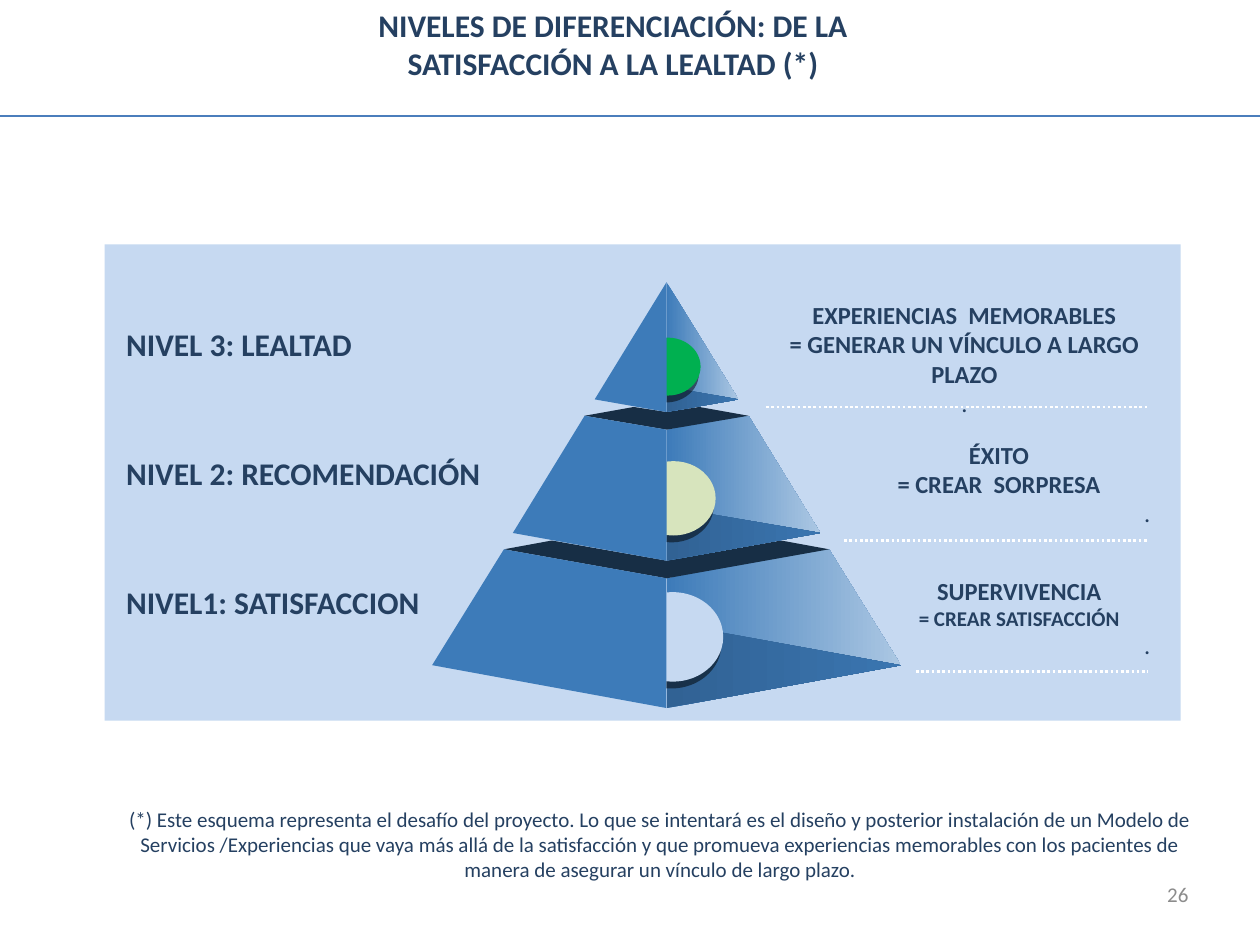
from lxml import etree
from pptx import Presentation
from pptx.dml.color import RGBColor
from pptx.enum.dml import MSO_LINE
from pptx.enum.shapes import MSO_CONNECTOR, MSO_SHAPE
from pptx.enum.text import MSO_ANCHOR, MSO_AUTO_SIZE, PP_ALIGN
from pptx.oxml import parse_xml
from pptx.oxml.ns import nsdecls, qn
from pptx.util import Inches, Pt

CENTER, RIGHT = PP_ALIGN.CENTER, PP_ALIGN.RIGHT
TOP, MIDDLE = MSO_ANCHOR.TOP, MSO_ANCHOR.MIDDLE
GROW, FIXED = MSO_AUTO_SIZE.SHAPE_TO_FIT_TEXT, MSO_AUTO_SIZE.NONE
DOTS = MSO_LINE.ROUND_DOT
RECTANGLE, OVAL = MSO_SHAPE.RECTANGLE, MSO_SHAPE.OVAL
STRAIGHT = MSO_CONNECTOR.STRAIGHT

NAVY = RGBColor(0x25, 0x40, 0x61)
GREY = RGBColor(0x8C, 0x8C, 0x8C)
WHITE = RGBColor(0xFF, 0xFF, 0xFF)
PALE_BLUE = RGBColor(0xC6, 0xD9, 0xF1)
RULE_BLUE = RGBColor(0x4B, 0x7E, 0xBC)
FACE_BLUE = RGBColor(0x3D, 0x7B, 0xB9)
FACE_LIGHT = RGBColor(0xAB, 0xC7, 0xE3)
FLOOR_DARK = RGBColor(0x31, 0x62, 0x94)
FLOOR_LIGHT = RGBColor(0x3A, 0x75, 0xB0)
LID = RGBColor(0x17, 0x2E, 0x45)
GREEN = RGBColor(0x00, 0xB0, 0x50)
LIME = RGBColor(0xD7, 0xE4, 0xBD)

AXIS = 5.29  # vertical axis of the pyramid
LABEL_INSETS = (0.1, 0.1, 0.08, 0.1)
NOTE_INSETS = (0.1, 0.05, 0.04, 0.05)

# Top to bottom. Each edge is (half width, y at the side, y on the axis)
TIERS = [
    {"top": (0, 2.24, 2.24), "base": (0.57, 3.17, 3.27), "floor": 3.07,
     "ball": (5.04, 2.68, 0.52, 0.46), "color": GREEN, "rule": (6.08, 3.23),
     "label": "NIVEL 3: LEALTAD ", "label_box": (0.88, 2.48, 2.05, 0.5),
     "note_box": (5.92, 2.33, 3.41, 1.04), "dot_align": CENTER,
     "note": [("EXPERIENCIAS  MEMORABLES", 14),
              ("= GENERAR UN VÍNCULO A LARGO PLAZO", 14)]},
    {"top": (0.65, 3.3, 3.41), "base": (1.22, 4.23, 4.45), "floor": 4.02,
     "lid": (0.26, 3.23, 3.27),
     "ball": (5.01, 3.66, 0.67, 0.59), "color": LIME, "rule": (6.7, 4.29),
     "label": "NIVEL 2: RECOMENDACIÓN ", "label_box": (0.88, 3.5, 3.07, 0.5),
     "note_box": (6.63, 3.44, 2.54, 0.81), "dot_align": RIGHT,
     "note": [("ÉXITO", 14), ("= CREAR  SORPRESA", 14)]},
    {"top": (1.29, 4.36, 4.59), "base": (1.86, 5.28, 5.62), "floor": 4.94,
     "lid": (0.91, 4.29, 4.45),
     "ball": (4.94, 4.7, 0.8, 0.71), "color": PALE_BLUE, "rule": (7.27, 5.33),
     "label": "NIVEL1: SATISFACCION", "label_box": (0.88, 4.53, 2.53, 0.5),
     "note_box": (6.95, 4.52, 2.22, 0.81), "dot_align": RIGHT,
     "note": [("SUPERVIVENCIA", 14), ("= CREAR SATISFACCIÓN", 12)]},
]


class SlideBuilder:
    font = "Calibri"

    def __init__(self, slide):
        self.slide = slide
        self.shapes = slide.shapes

    def paint(self, shape, colors):
        """Fill with one colour, or with a left-to-right gradient of two."""
        shape.shadow.inherit = False
        shape.line.fill.background()
        if len(colors) == 1:
            shape.fill.solid()
            shape.fill.fore_color.rgb = colors[0]
            return
        shape.fill.gradient()
        shape.fill.gradient_angle = 0
        for stop, color in zip(shape.fill.gradient_stops, colors):
            stop.color.rgb = color

    def preset(self, kind, box, color):
        shape = self.shapes.add_shape(kind, *map(Inches, box))
        self.paint(shape, [color])
        return shape

    def ball(self, box, color):
        ball = self.preset(OVAL, box, color)
        effects = ball._element.spPr.find(qn("a:effectLst"))
        effects.append(parse_xml(
            f'<a:outerShdw {nsdecls("a")} blurRad="0" dist="52000" dir="6240000" '
            'rotWithShape="0"><a:srgbClr val="000000"><a:alpha val="50000"/>'
            '</a:srgbClr></a:outerShdw>'))

    def polygon(self, points, *colors):
        start, *rest = [(Inches(x), Inches(y)) for x, y in points]
        outline = self.shapes.build_freeform(*start)
        outline.add_line_segments(rest, close=True)
        self.paint(outline.convert_to_shape(), colors)

    def rule(self, x1, x2, y, color, width, dash=None):
        line = self.shapes.add_connector(STRAIGHT, *map(Inches, (x1, y, x2, y)))
        line.line.color.rgb = color
        line.line.width = Pt(width)
        if dash:
            line.line.dash_style = dash
        etree.SubElement(line._element.spPr, qn("a:effectLst"))

    def set_text(self, frame, paragraphs, insets=(0.1, 0.05, 0.1, 0.05),
                 color=NAVY, wrap=True, anchor=TOP, grow=GROW):
        """Fill a frame with paragraphs given as (text, size, bold, alignment)."""
        left, top, right, bottom = map(Inches, insets)
        layout = {"margin_left": left, "margin_top": top, "margin_right": right,
                  "margin_bottom": bottom, "word_wrap": wrap,
                  "auto_size": grow, "vertical_anchor": anchor}
        for name, value in layout.items():
            setattr(frame, name, value)
        for i, (text, size, bold, align) in enumerate(paragraphs):
            paragraph = frame.add_paragraph() if i else frame.paragraphs[0]
            paragraph.alignment = align
            run = paragraph.add_run()
            run.text = text
            style = {"name": self.font, "size": Pt(size), "bold": bold}
            for name, value in style.items():
                setattr(run.font, name, value)
            run.font.color.rgb = color

    def text(self, box, paragraphs, **layout):
        frame = self.shapes.add_textbox(*map(Inches, box)).text_frame
        self.set_text(frame, paragraphs, **layout)

    def title(self, box, text, size):
        title = self.shapes.title
        title.left, title.top, title.width, title.height = map(Inches, box)
        self.set_text(title.text_frame, [(text, size, True, CENTER)])


def face(tier, side):
    """Outline of one half of a tier; side is 1 for right, -1 for left."""
    (top, top_y, top_axis), (base, base_y, base_axis) = tier["top"], tier["base"]
    return [(AXIS, top_axis), (AXIS + side * top, top_y),
            (AXIS + side * base, base_y), (AXIS, base_axis)]


def lid(tier):
    """Outline of the dark top seen in the gap above a tier."""
    (inner, inner_y, inner_axis), (outer, outer_y, outer_axis) = tier["lid"], tier["top"]
    return [(AXIS - outer, outer_y), (AXIS - inner, inner_y), (AXIS, inner_axis),
            (AXIS + inner, inner_y), (AXIS + outer, outer_y), (AXIS, outer_axis)]


def main():
    prs = Presentation()
    prs.slide_width, prs.slide_height = Inches(10), Inches(7.5)
    page = SlideBuilder(prs.slides.add_slide(prs.slide_layouts[5]))

    # Heading and panel
    page.title((2.24, 0, 5.25, 0.71),
               "NIVELES DE DIFERENCIACIÓN: DE LA SATISFACCIÓN A LA LEALTAD (*)", 18)
    page.rule(0, 10, 0.92, RULE_BLUE, 0.75)
    page.preset(RECTANGLE, (0.83, 1.94, 8.54, 3.78), PALE_BLUE)

    # Pyramid, from the bottom tier up
    for tier in reversed(TIERS):
        base, base_y, base_axis = tier["base"]
        page.polygon(face(tier, 1), FACE_BLUE, FACE_LIGHT)
        if "lid" in tier:
            page.polygon(lid(tier), LID)
        page.polygon([(AXIS, tier["floor"]), (AXIS + base, base_y), (AXIS, base_axis)],
                     FLOOR_DARK, FLOOR_LIGHT)
        page.ball(tier["ball"], tier["color"])
        page.polygon(face(tier, -1), FACE_BLUE)

    # Level names, notes and dotted rules
    for tier in TIERS:
        rule_x, rule_y = tier["rule"]
        page.rule(rule_x, 9.11, rule_y, WHITE, 1.5, DOTS)
        page.text(tier["label_box"], [(tier["label"], 18, True, RIGHT)],
                  insets=LABEL_INSETS, wrap=False)
        note = [(text, size, True, CENTER) for text, size in tier["note"]]
        page.text(tier["note_box"], note + [(".", 14, False, tier["dot_align"])],
                  insets=NOTE_INSETS)

    # Footnote and page number
    page.text((0.91, 6.35, 8.66, 0.71), [(
        "(*) Este esquema representa el desafío del proyecto. Lo que se intentará es "
        "el diseño y posterior instalación de un Modelo de Servicios /Experiencias que "
        "vaya más allá de la satisfacción y que promueva experiencias memorables con "
        "los pacientes de manera de asegurar un vínculo de largo plazo.",
        12, False, CENTER)])
    page.text((8.54, 6.9, 0.99, 0.4), [("26", 12, False, RIGHT)],
              color=GREY, anchor=MIDDLE, grow=FIXED)

    prs.save("out.pptx")


if __name__ == "__main__":
    main()
